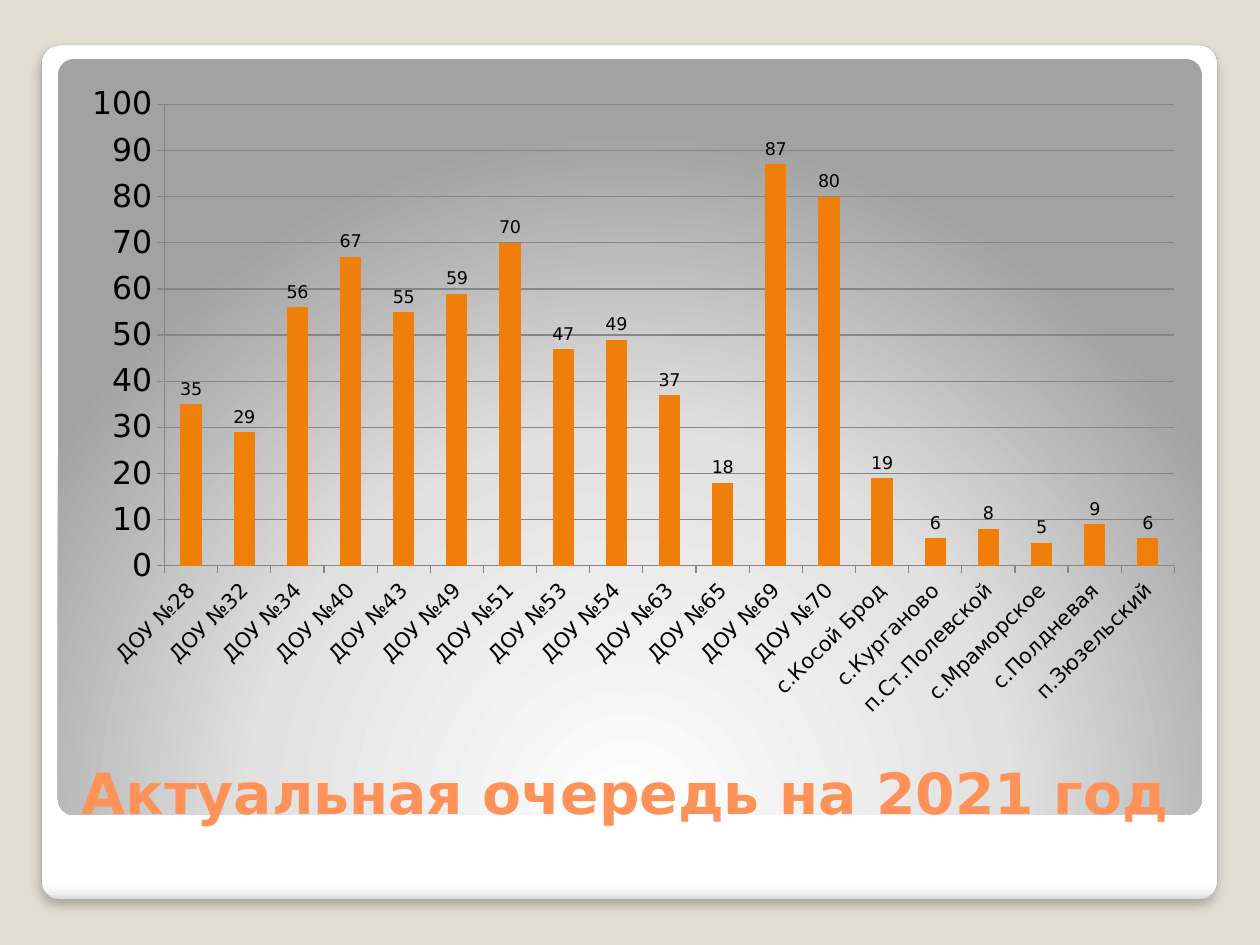
from pptx import Presentation
from pptx.chart.data import CategoryChartData
from pptx.dml.color import RGBColor
from pptx.enum import chart as charts, shapes, text
from pptx.oxml import parse_xml
from pptx.oxml.ns import nsdecls, qn
from pptx.util import Cm, Pt

# Content
TITLE = "Актуальная очередь на 2021 год"
QUEUE = [
    ("ДОУ №28", 35), ("ДОУ №32", 29), ("ДОУ №34", 56), ("ДОУ №40", 67),
    ("ДОУ №43", 55), ("ДОУ №49", 59), ("ДОУ №51", 70), ("ДОУ №53", 47),
    ("ДОУ №54", 49), ("ДОУ №63", 37), ("ДОУ №65", 18), ("ДОУ №69", 87),
    ("ДОУ №70", 80), ("с.Косой Брод", 19), ("с.Курганово", 6),
    ("п.Ст.Полевской", 8), ("с.Мраморское", 5), ("с.Полдневая", 9),
    ("п.Зюзельский", 6),
]

# Style
FONT = "DejaVu Sans"
COLORS = {"page": "E3DED1", "edge": "A4A4A4", "title": "FF9258",
          "bar": "F07F09", "grid": "868686", "text": "000000"}
CARD_STOPS = [(0, "FFFFFF"), (98, "FFFFFF"), (99, "F7F7F7"), (100, "DADADA")]
PANEL_STOPS = [(0, "FFFFFF"), (55, "E1E1E1"), (100, "A2A2A2")]
DOWNWARD = '<a:lin ang="5400000" scaled="0"/>'
FROM_BELOW = ('<a:path path="circle"><a:fillToRect l="50000" t="175000" '
              'r="50000" b="-75000"/></a:path>')
SHADOW = (f'<a:outerShdw {nsdecls("a")} blurRad="{Pt(6)}" dist="{Pt(4)}" '
          'dir="5400000" algn="tl" rotWithShape="0"><a:srgbClr val="000000">'
          '<a:alpha val="25000"/></a:srgbClr></a:outerShdw>')

# Places: left, top, width, height in cm
CARD = (0.84, 0.91, 23.7, 17.22)
PANEL = (1.17, 1.19, 23.06, 15.24)
CHART = (1.4, 1.47, 22.73, 13.26)
HEADING = (1.4, 14.48, 22.73, 2.29)


def place(area):
    return [Cm(length) for length in area]


def color(name):
    return RGBColor.from_string(COLORS[name])


def set_font(font, size, name="text", bold=False):
    values = {"name": FONT, "size": Pt(size), "bold": bold}
    for key, value in values.items():
        setattr(font, key, value)
    font.color.rgb = color(name)


def add_rounded(page, area, stops, direction):
    shape = page.shapes.add_shape(
        shapes.MSO_SHAPE.ROUNDED_RECTANGLE, *place(area))
    shape.adjustments[0] = 0.021
    shape.shadow.inherit = False
    shape.line.fill.background()
    shape.fill.background()
    marks = "".join(f'<a:gs pos="{spot * 1000}"><a:srgbClr val="{shade}"/></a:gs>'
                    for spot, shade in stops)
    gradient = parse_xml(f'<a:gradFill {nsdecls("a")} rotWithShape="1">'
                         f'<a:gsLst>{marks}</a:gsLst>{direction}</a:gradFill>')
    properties = shape._element.spPr
    properties.replace(properties.find(qn("a:noFill")), gradient)
    return shape


def add_queue_chart(page):
    data = CategoryChartData()
    data.categories = [name for name, count in QUEUE]
    data.add_series("Очередь", [count for name, count in QUEUE])
    chart = page.shapes.add_chart(
        charts.XL_CHART_TYPE.COLUMN_CLUSTERED, *place(CHART), data).chart
    chart.has_legend = chart.has_title = False
    set_font(chart.font, 18)

    # Bars and their values
    plot = chart.plots[0]
    plot.gap_width = 150
    plot.vary_by_categories = False
    bars = plot.series[0].format.fill
    bars.solid()
    bars.fore_color.rgb = color("bar")
    plot.has_data_labels = True
    labels = plot.data_labels
    labels.show_value = True
    labels.position = charts.XL_LABEL_POSITION.OUTSIDE_END
    set_font(labels.font, 10)

    # Axes
    names, counts = chart.category_axis, chart.value_axis
    for axis, size in ((names, 12), (counts, 18)):
        axis.major_tick_mark = charts.XL_TICK_MARK.OUTSIDE
        axis.minor_tick_mark = charts.XL_TICK_MARK.NONE
        set_font(axis.tick_labels.font, size)
    names.tick_labels.offset = 100
    names._element.txPr.bodyPr.set("rot", "-2700000")
    scale = {"minimum_scale": 0, "maximum_scale": 100, "major_unit": 10,
             "has_major_gridlines": True}
    for key, value in scale.items():
        setattr(counts, key, value)
    for part in (names, counts, counts.major_gridlines):
        part.format.line.color.rgb = color("grid")
        part.format.line.width = Pt(0.75)


def add_heading(page):
    box = page.shapes.add_textbox(*place(HEADING))
    frame = box.text_frame
    frame.word_wrap = True
    frame.vertical_anchor = text.MSO_ANCHOR.BOTTOM
    span = frame.paragraphs[0].add_run()
    span.text = TITLE
    set_font(span.font, 32.4, "title", bold=True)


def main():
    deck = Presentation()
    deck.slide_width, deck.slide_height = Cm(25.4), Cm(19.05)
    page = deck.slides.add_slide(deck.slide_layouts[6])
    page.background.fill.solid()
    page.background.fill.fore_color.rgb = color("page")

    # White card with a soft shadow, grey panel on it
    card = add_rounded(page, CARD, CARD_STOPS, DOWNWARD)
    card.line.color.rgb = color("edge")
    card.line.width = Pt(0.16)
    card._element.spPr.find(qn("a:effectLst")).append(parse_xml(SHADOW))
    add_rounded(page, PANEL, PANEL_STOPS, FROM_BELOW)

    add_heading(page)
    add_queue_chart(page)
    deck.save("out.pptx")


if __name__ == "__main__":
    main()
